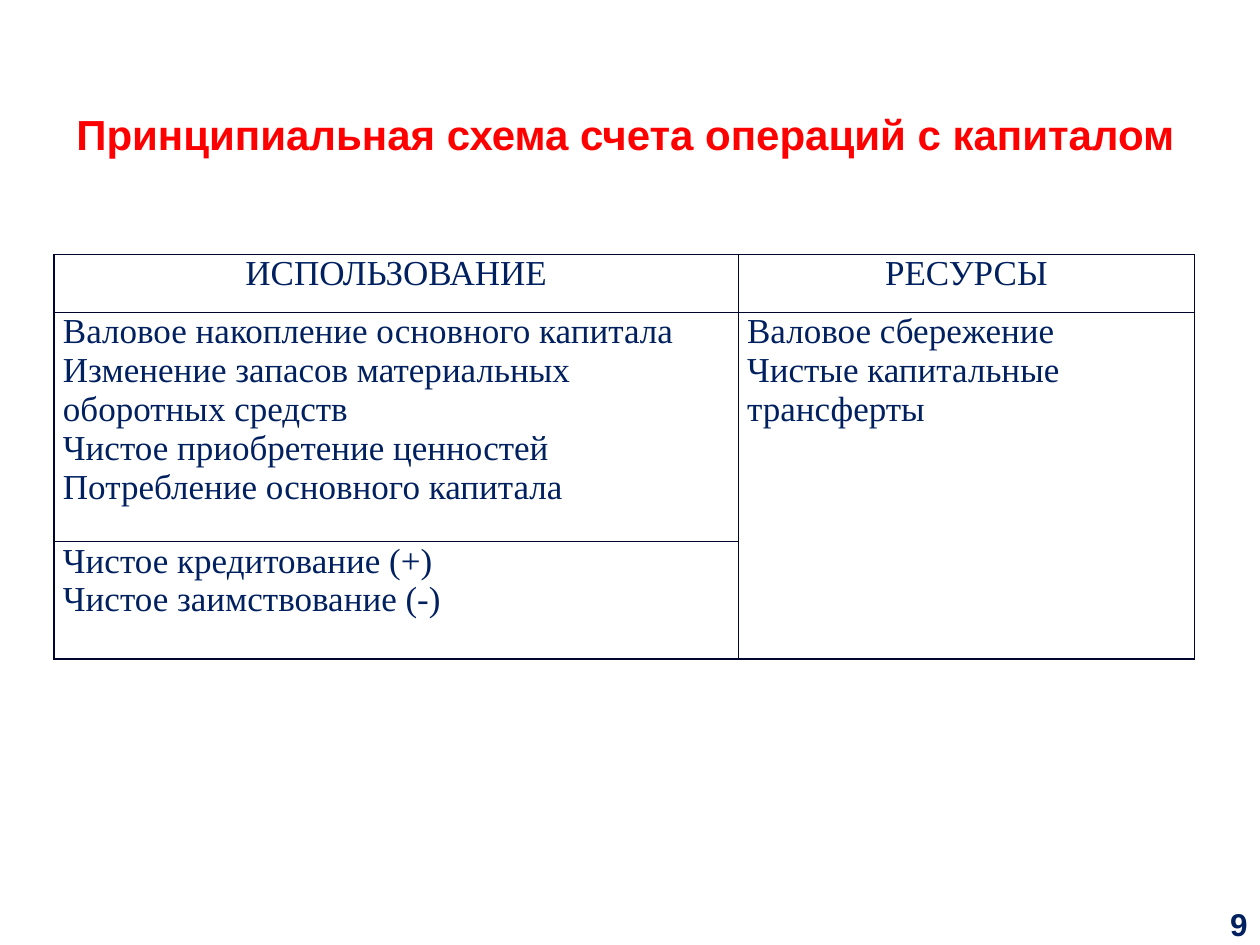
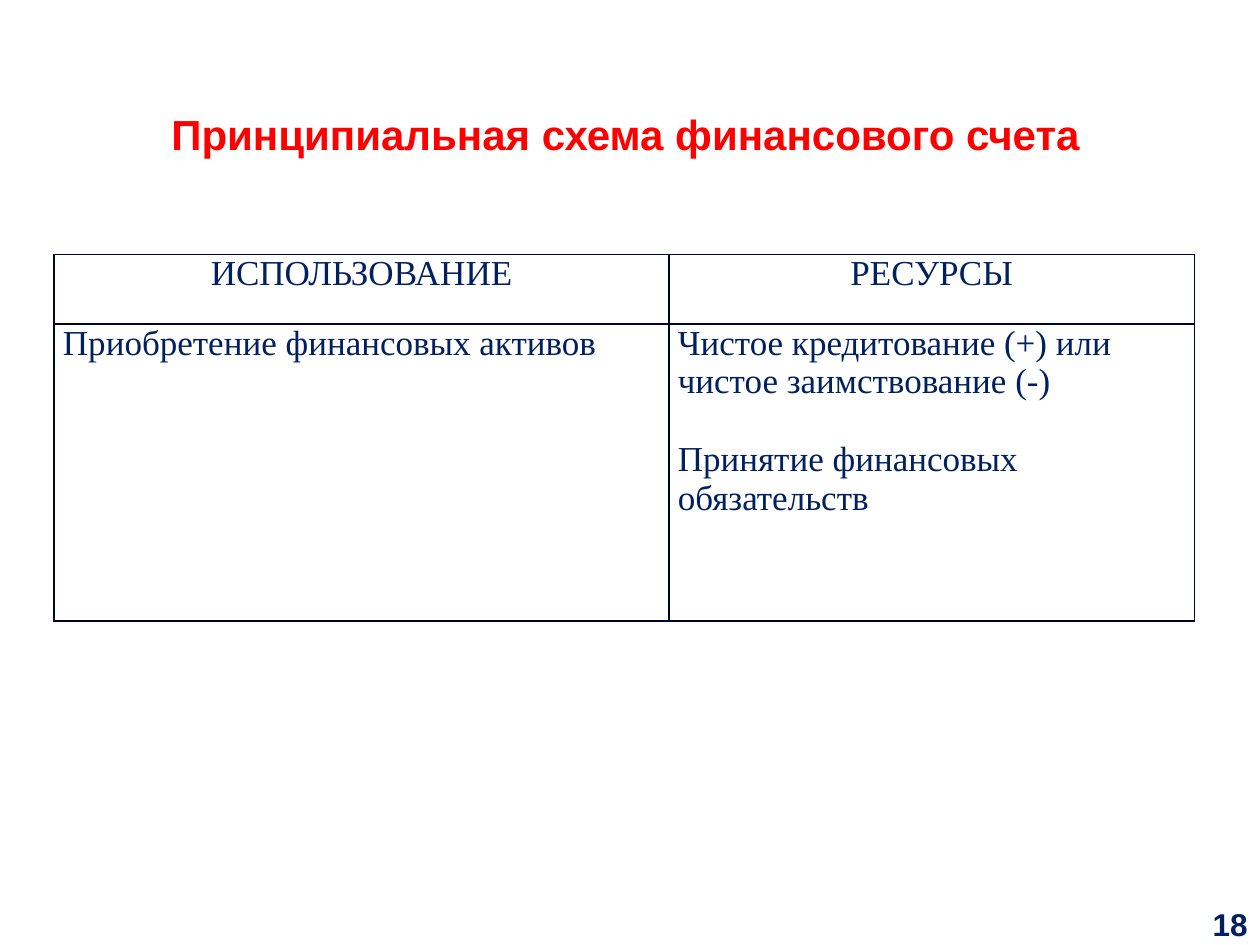
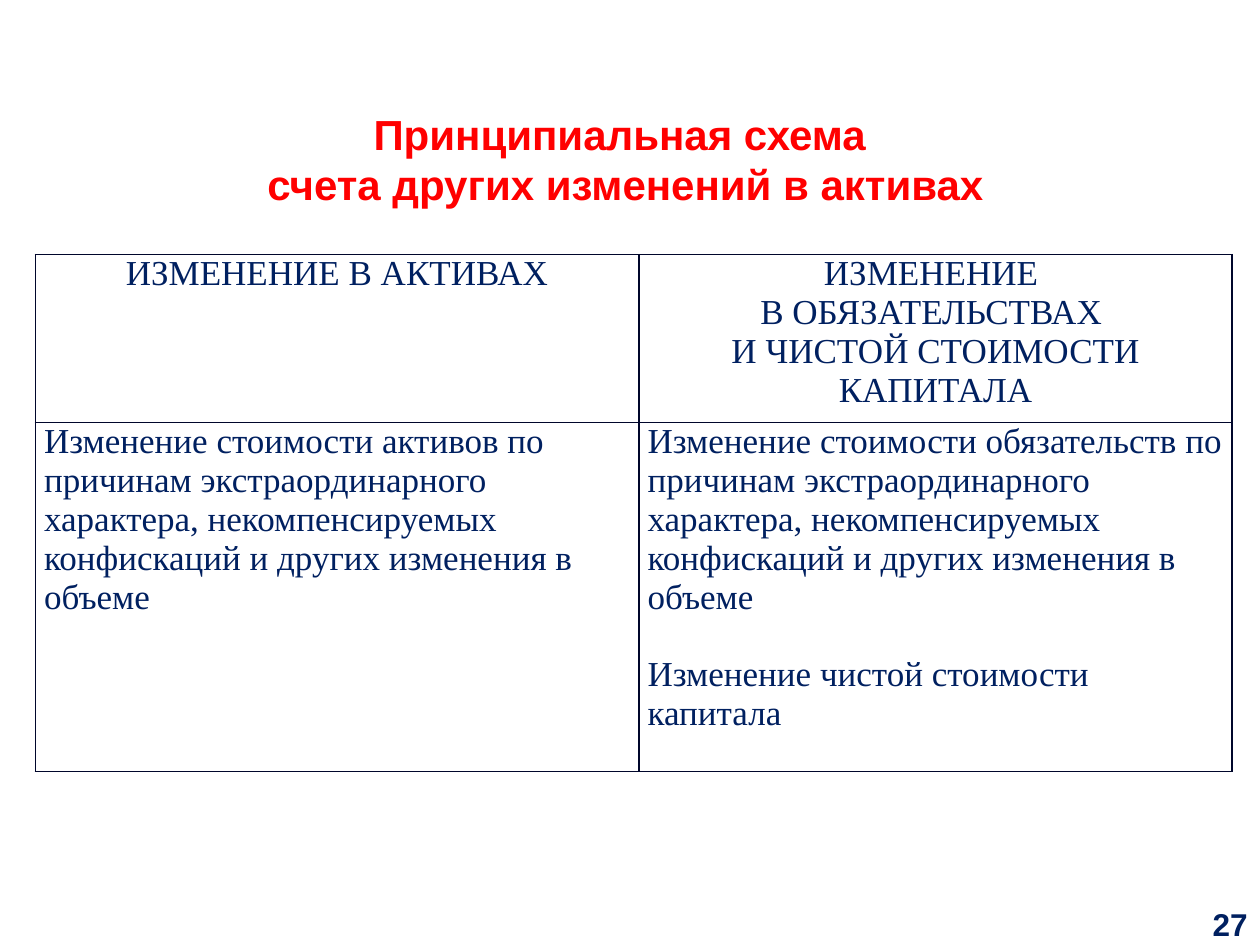
import pptx
import pptx.util
import pptx.dml.color
import pptx.enum.text
import lxml.etree

Inches, Pt = pptx.util.Inches, pptx.util.Pt
ALIGN = pptx.enum.text.PP_ALIGN
ANCHOR = pptx.enum.text.MSO_ANCHOR
RED, NAVY, INK = "FF0000", "002060", "00062B"
SANS, SERIF = "Arial", "Times New Roman"
TOP = 2.02
CAUSES = "по причинам экстраординарного характера, некомпенсируемых конфискаций и других изменения в объеме"

# Each cell is a list of paragraphs; None continues the cell above
SLIDES = [
    dict(
        page="9", title="Принципиальная схема счета операций с капиталом",
        left=0.43, cols=[5.43, 3.62], rows=[0.46, 1.82, 0.93],
        cells=[
            [["ИСПОЛЬЗОВАНИЕ"], ["РЕСУРСЫ"]],
            [["Валовое накопление основного капитала\n"
              "Изменение запасов материальных оборотных средств\n"
              "Чистое приобретение ценностей\n"
              "Потребление основного капитала"],
             ["Валовое сбережение\nЧистые капитальные трансферты"]],
            [["Чистое кредитование (+)\nЧистое заимствование (-)"], None],
        ]),
    dict(
        page="18", title="Принципиальная схема финансового счета",
        left=0.43, cols=[4.88, 4.17], rows=[0.55, 2.36],
        cells=[
            [["ИСПОЛЬЗОВАНИЕ"], ["РЕСУРСЫ"]],
            [["Приобретение финансовых активов"],
             ["Чистое кредитование (+) или чистое заимствование (-)",
              "Принятие финансовых обязательств"]],
        ]),
    dict(
        page="27", title="Принципиальная схема \nсчета других изменений в активах",
        left=0.28, cols=[4.79, 4.71], rows=[1.33, 2.77],
        cells=[
            [["ИЗМЕНЕНИЕ В АКТИВАХ"],
             ["ИЗМЕНЕНИЕ \nВ ОБЯЗАТЕЛЬСТВАХ \nИ ЧИСТОЙ СТОИМОСТИ КАПИТАЛА"]],
            [["Изменение стоимости активов " + CAUSES],
             ["Изменение стоимости обязательств " + CAUSES,
              "Изменение чистой стоимости капитала"]],
        ]),
]


def color(code):
    return pptx.dml.color.RGBColor.from_string(code)


def write(frame, paras, size=20, font=SERIF, ink=NAVY, bold=False,
          align=ALIGN.LEFT, gap=22):
    """Fill a frame with paragraphs set apart by a gap in points."""
    frame.word_wrap = True
    for i, text in enumerate(paras):
        para = frame.add_paragraph() if i else frame.paragraphs[0]
        para.text = text.replace("\n", "\v")
        para.alignment = align
        para.space_before = Pt(gap if i else 0)
        for run in para.runs:
            run.font.size, run.font.name = Pt(size), font
            run.font.bold = bold
            run.font.color.rgb = color(ink)


def add_box(slide, text, left, top, width, height, anchor=ANCHOR.TOP, **style):
    box = slide.shapes.add_textbox(*map(Inches, (left, top, width, height)))
    box.text_frame.vertical_anchor = anchor
    write(box.text_frame, [text], font=SANS, bold=True, **style)


def add_edges(cell):
    """Draw a thin line on all four sides of a cell."""
    props = cell._tc.get_or_add_tcPr()
    space = "http://schemas.openxmlformats.org/drawingml/2006/main"
    for side in ("lnL", "lnR", "lnT", "lnB"):
        line = lxml.etree.SubElement(props, f"{{{space}}}{side}", w=str(Pt(1)))
        fill = lxml.etree.SubElement(line, f"{{{space}}}solidFill")
        lxml.etree.SubElement(fill, f"{{{space}}}srgbClr", val=INK)


def add_grid(slide, left, cols, rows, cells):
    table = slide.shapes.add_table(
        len(rows), len(cols), Inches(left), Inches(TOP),
        Inches(sum(cols)), Inches(sum(rows))).table
    table.first_row = table.horz_banding = False
    for col, width in zip(table.columns, cols):
        col.width = Inches(width)
    for row, height in zip(table.rows, rows):
        row.height = Inches(height)
    for r, line in enumerate(cells):
        for c, paras in enumerate(line):
            cell = table.cell(r, c)
            cell.margin_left = cell.margin_right = Inches(0.07)
            cell.margin_top = cell.margin_bottom = 0
            add_edges(cell)
            cell.fill.background()
            if paras is None:
                table.cell(r - 1, c).merge(cell)
            else:
                write(cell.text_frame, paras,
                      align=ALIGN.LEFT if r else ALIGN.CENTER)


def main():
    deck = pptx.Presentation()
    deck.slide_width, deck.slide_height = Inches(10), Inches(7.5)
    for data in SLIDES:
        slide = deck.slides.add_slide(deck.slide_layouts[6])
        # Page number and title
        add_box(slide, data["page"], 9.49, 7.14, 0.51, 0.39,
                anchor=ANCHOR.BOTTOM, size=18, align=ALIGN.RIGHT)
        lines = data["title"].count("\n")
        add_box(slide, data["title"], 0.16, 0.81, 9.61, 0.5 + 0.41 * lines,
                size=24, ink=RED, align=ALIGN.CENTER)
        # Account table
        add_grid(slide, data["left"], data["cols"], data["rows"], data["cells"])
    deck.save("out.pptx")


if __name__ == "__main__":
    main()
